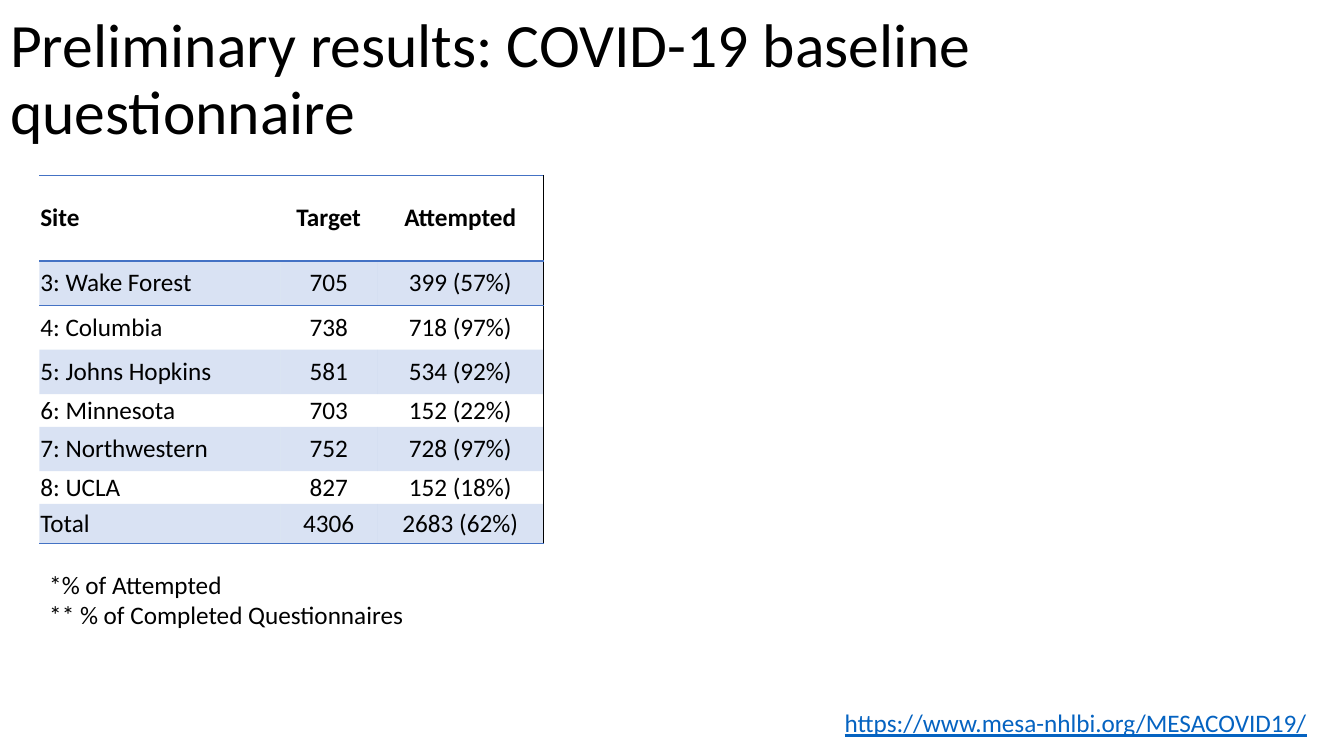
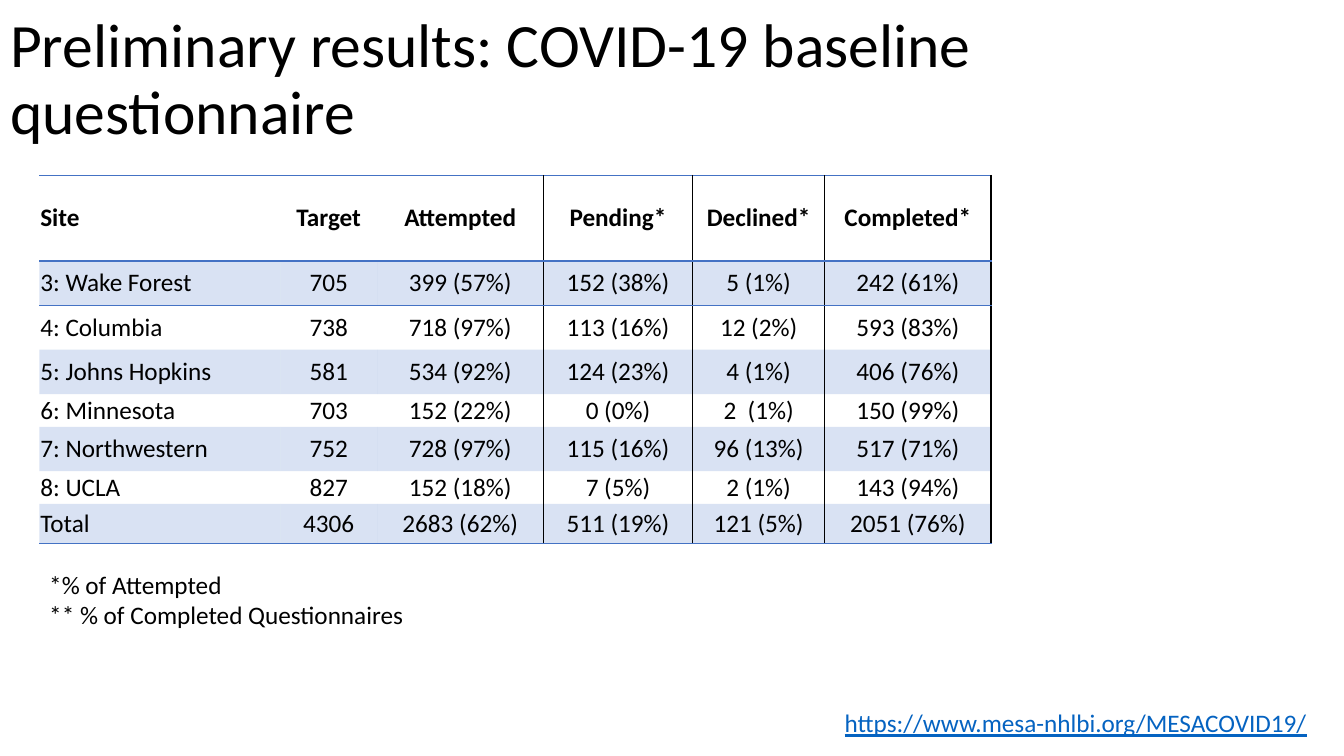
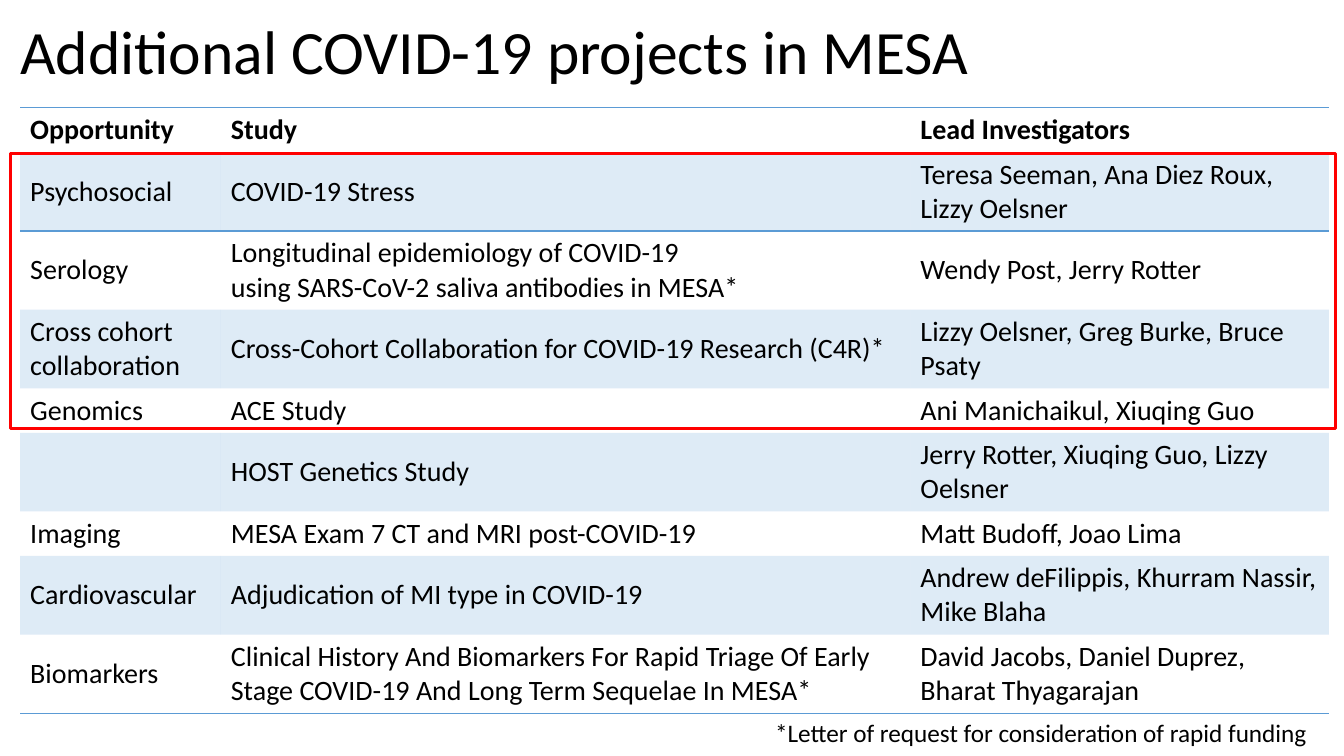
from dataclasses import dataclass

from lxml import etree
from pptx import Presentation
from pptx.dml.color import RGBColor
from pptx.enum.shapes import MSO_SHAPE
from pptx.enum.text import MSO_ANCHOR, MSO_AUTO_SIZE, PP_ALIGN
from pptx.oxml.ns import qn
from pptx.slide import Slide
from pptx.table import _Cell
from pptx.text.text import TextFrame
from pptx.util import Inches, Pt

LEFT, CENTER, RIGHT = PP_ALIGN.LEFT, PP_ALIGN.CENTER, PP_ALIGN.RIGHT
TOP, MIDDLE = MSO_ANCHOR.TOP, MSO_ANCHOR.MIDDLE
NO_FIT = MSO_AUTO_SIZE.NONE
RECTANGLE = MSO_SHAPE.RECTANGLE

FONT = "Calibri"
COLORS = {
    "text": "000000",
    "link": "0563C1",
    "results": "4472C4",
    "projects": "5B9BD5",
    "highlight": "FF0000",
}
PLAIN_TABLE_STYLE = "{2D5ABB26-0587-4C30-8999-92F81FD0307C}"
BAND_OPACITY = 20000  # thousandths of a percent
TITLE_ONLY_LAYOUT = 5


@dataclass(frozen=True)
class Box:
    left: float
    top: float
    width: float
    height: float

    def lengths(self) -> tuple:
        return tuple(Inches(n) for n in (self.left, self.top, self.width, self.height))


@dataclass(frozen=True)
class TableDesign:
    left: float
    top: float
    columns: tuple[float, ...]
    rows: tuple[float, ...]
    color: str
    size: int
    margins: tuple[float, float]  # sides, top and bottom
    header_anchor: MSO_ANCHOR
    aligns: tuple[PP_ALIGN, ...]
    ruled_columns: tuple[int, ...] = ()  # columns with a black line on the right


RESULTS_TITLE = "Preliminary results: COVID-19 baseline questionnaire"
RESULTS_TITLE_BOX = Box(0, 0.08, 13.23, 1.45)
RESULTS_COLUMNS = (2.39, 0.96, 1.65, 1.48, 1.31, 1.65)
RESULTS_ROWS = (0.85, 0.44, 0.44, 0.44, 0.31, 0.44, 0.31, 0.39)
RESULTS = (
    ("Site", "Target", "Attempted", "Pending*", "Declined*", "Completed*"),
    ("3: Wake Forest", "705", "399 (57%)", "152 (38%)", "5 (1%)", "242 (61%)"),
    ("4: Columbia", "738", "718 (97%)", "113 (16%)", "12 (2%)", "593 (83%)"),
    ("5: Johns Hopkins", "581", "534 (92%)", "124 (23%)", "4 (1%)", "406 (76%)"),
    ("6: Minnesota", "703", "152 (22%)", "0 (0%)", "2  (1%)", "150 (99%)"),
    ("7: Northwestern", "752", "728 (97%)", "115 (16%)", "96 (13%)", "517 (71%)"),
    ("8: UCLA", "827", "152 (18%)", "7 (5%)", "2 (1%)", "143 (94%)"),
    ("Total", "4306", "2683 (62%)", "511 (19%)", "121 (5%)", "2051 (76%)"),
)
PROJECTS = (
    ("Opportunity", "Study", "Lead Investigators"),
    ("Psychosocial", "COVID-19 Stress", "Teresa Seeman, Ana Diez Roux, Lizzy Oelsner"),
    ("Serology",
     "Longitudinal epidemiology of COVID-19 \nusing SARS-CoV-2 saliva antibodies in MESA*",
     "Wendy Post, Jerry Rotter"),
    ("Cross cohort collaboration",
     "Cross-Cohort Collaboration for COVID-19 Research (C4R)*",
     "Lizzy Oelsner, Greg Burke, Bruce Psaty"),
    ("Genomics", "ACE Study", "Ani Manichaikul, Xiuqing Guo"),
    ("", "HOST Genetics Study", "Jerry Rotter, Xiuqing Guo, Lizzy Oelsner"),
    ("Imaging", "MESA Exam 7 CT and MRI post-COVID-19", "Matt Budoff, Joao Lima"),
    ("Cardiovascular", "Adjudication of MI type in COVID-19",
     "Andrew deFilippis, Khurram Nassir, Mike Blaha"),
    ("Biomarkers",
     "Clinical History And Biomarkers For Rapid Triage Of Early Stage COVID-19 "
     "And Long Term Sequelae In MESA*",
     "David Jacobs, Daniel Duprez, Bharat Thyagarajan"),
)


def write_text(frame: TextFrame, *lines: str, size: int = 18, color: str = "text",
               bold: bool = False, underline: bool = False, align: PP_ALIGN = LEFT,
               spacing: float = 1.0) -> None:
    """Write one paragraph per line, all in the same format."""
    for index, line in enumerate(lines):
        paragraph = frame.add_paragraph() if index else frame.paragraphs[0]
        paragraph.text = line
        paragraph.alignment = align
        paragraph.line_spacing = spacing
        for run in paragraph.runs:
            run.font.name = FONT
            run.font.size = Pt(size)
            run.font.bold = bold
            run.font.underline = underline
            run.font.color.rgb = RGBColor.from_string(COLORS[color])


def add_titled_slide(presentation: Presentation, title: str, box: Box) -> Slide:
    slide = presentation.slides.add_slide(presentation.slide_layouts[TITLE_ONLY_LAYOUT])
    shape = slide.shapes.title
    shape.left, shape.top, shape.width, shape.height = box.lengths()
    frame = shape.text_frame
    frame.auto_size = NO_FIT
    frame.vertical_anchor = MIDDLE
    write_text(frame, title, size=44, spacing=0.9)
    return slide


def add_text(slide: Slide, box: Box, *lines: str, wrap: bool = True, **text_format) -> None:
    frame = slide.shapes.add_textbox(*box.lengths()).text_frame
    frame.word_wrap = wrap
    write_text(frame, *lines, **text_format)


def fill_band(cell: _Cell, color: str) -> None:
    cell.fill.solid()
    cell.fill.fore_color.rgb = RGBColor.from_string(COLORS[color])
    color_element = cell._tc.tcPr.find(f".//{qn('a:srgbClr')}")
    etree.SubElement(color_element, qn("a:alpha"), val=str(BAND_OPACITY))


def set_borders(cell: _Cell, borders: dict[str, str]) -> None:
    """Draw 1 pt borders, given in the order lnL, lnR, lnT, lnB."""
    properties = cell._tc.get_or_add_tcPr()
    for index, (side, color) in enumerate(borders.items()):
        line = etree.Element(qn(f"a:{side}"), w=str(Pt(1)))
        solid = etree.SubElement(line, qn("a:solidFill"))
        etree.SubElement(solid, qn("a:srgbClr"), val=COLORS[color])
        properties.insert(index, line)


def add_data_table(slide: Slide, data: tuple, design: TableDesign) -> None:
    box = Box(design.left, design.top, sum(design.columns), sum(design.rows))
    table = slide.shapes.add_table(len(design.rows), len(design.columns), *box.lengths()).table
    table._tbl.tblPr.find(qn("a:tableStyleId")).text = PLAIN_TABLE_STYLE
    for column, width in zip(table.columns, design.columns):
        column.width = Inches(width)
    for row, height in zip(table.rows, design.rows):
        row.height = Inches(height)

    side, edge = (Inches(margin) for margin in design.margins)
    last_row = len(design.rows) - 1
    for row_index, values in enumerate(data):
        is_header = row_index == 0
        for column_index, (value, align) in enumerate(zip(values, design.aligns)):
            cell = table.cell(row_index, column_index)
            cell.margin_left = cell.margin_right = side
            cell.margin_top = cell.margin_bottom = edge
            cell.vertical_anchor = design.header_anchor if is_header else MIDDLE
            write_text(cell.text_frame, value, size=design.size, bold=is_header, align=align)
            # Odd rows are banded
            if row_index % 2:
                fill_band(cell, design.color)
            else:
                cell.fill.background()
            # Lines around the header, under the last row and between groups
            borders = {}
            if column_index - 1 in design.ruled_columns:
                borders["lnL"] = "text"
            if column_index in design.ruled_columns:
                borders["lnR"] = "text"
            if row_index in (0, 1):
                borders["lnT"] = design.color
            if row_index in (0, last_row):
                borders["lnB"] = design.color
            set_borders(cell, borders)


def add_results_slide(presentation: Presentation, column_count: int,
                      ruled_columns: tuple[int, ...]) -> None:
    slide = add_titled_slide(presentation, RESULTS_TITLE, RESULTS_TITLE_BOX)
    design = TableDesign(
        left=0.39, top=1.74, columns=RESULTS_COLUMNS[:column_count], rows=RESULTS_ROWS,
        color="results", size=18, margins=(0.01, 0.01), header_anchor=MIDDLE,
        aligns=(LEFT,) + (CENTER,) * (column_count - 1), ruled_columns=ruled_columns)
    add_data_table(slide, tuple(row[:column_count] for row in RESULTS), design)
    add_text(slide, Box(8.28, 6.97, 4.84, 0.4), "https://www.mesa-nhlbi.org/MESACOVID19/",
             wrap=False, color="link", underline=True)
    add_text(slide, Box(0.39, 5.6, 5.1, 0.71),
             "*% of Attempted", "** % of Completed Questionnaires")


def add_projects_slide(presentation: Presentation) -> None:
    slide = add_titled_slide(presentation, "Additional COVID-19 projects in MESA",
                             Box(0.1, 0.02, 11.5, 1.05))
    design = TableDesign(
        left=0.2, top=1.07, columns=(1.99, 6.84, 4.15), rows=(0.41,) * len(PROJECTS),
        color="projects", size=20, margins=(0.1, 0.05), header_anchor=TOP,
        aligns=(LEFT,) * 3)
    add_data_table(slide, PROJECTS, design)
    add_text(slide, Box(0.88, 7.07, 12.18, 0.4),
             "*Letter of request for consideration of rapid funding", align=RIGHT)
    # Frame around the first four projects
    frame = slide.shapes.add_shape(RECTANGLE, *Box(0.1, 1.52, 13.15, 2.73).lengths())
    frame.shadow.inherit = False
    frame.fill.background()
    frame.line.color.rgb = RGBColor.from_string(COLORS["highlight"])
    frame.line.width = Pt(2.25)


def main() -> None:
    presentation = Presentation()
    presentation.slide_width = Inches(13.33)
    presentation.slide_height = Inches(7.5)
    add_results_slide(presentation, column_count=3, ruled_columns=(2,))
    add_results_slide(presentation, column_count=6, ruled_columns=(2, 3, 5))
    add_projects_slide(presentation)
    presentation.save("out.pptx")


if __name__ == "__main__":
    main()
